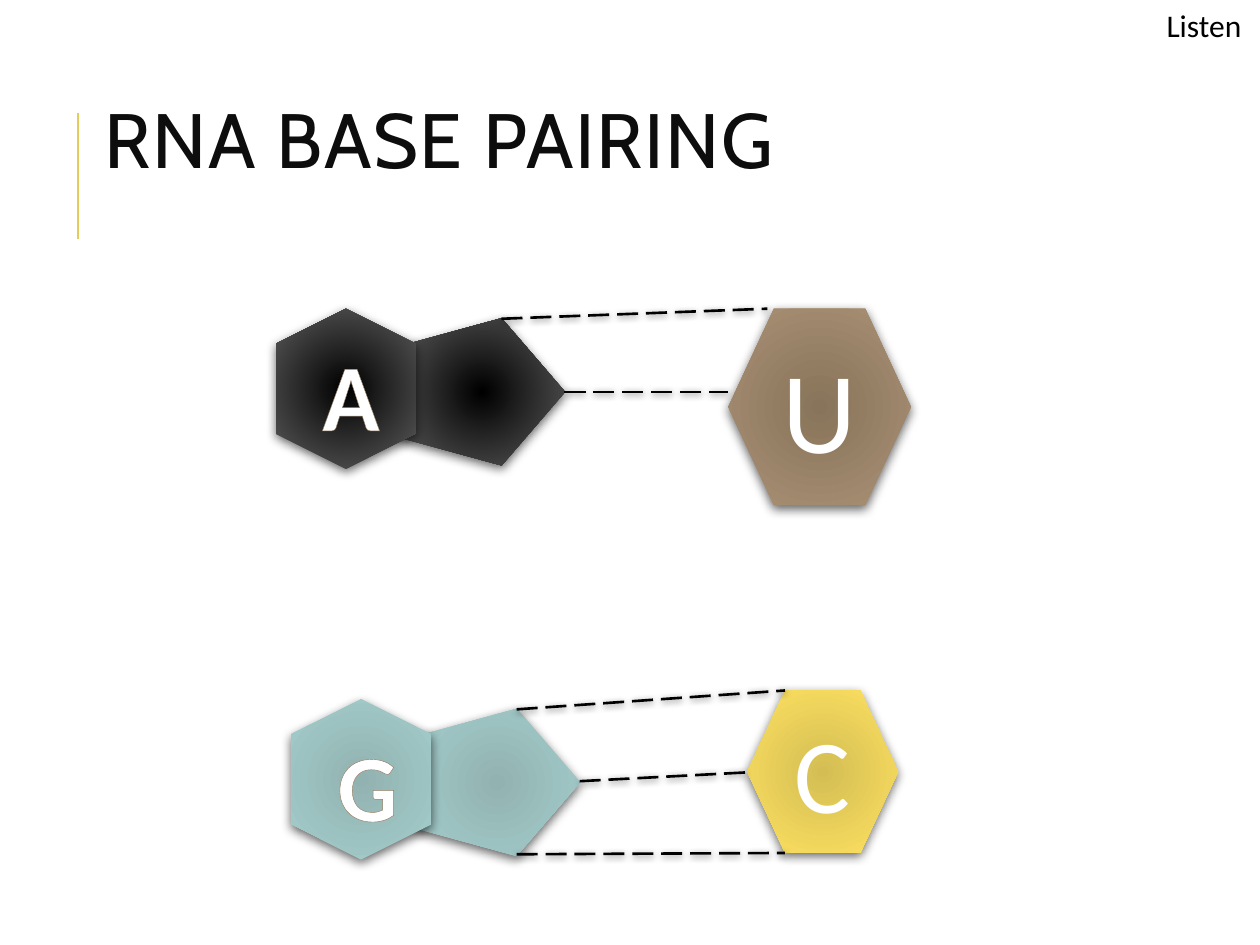
from lxml import etree
from pptx import Presentation
from pptx.dml.color import RGBColor
from pptx.enum.dml import MSO_LINE
from pptx.enum.shapes import MSO_CONNECTOR, MSO_SHAPE
from pptx.enum.text import MSO_ANCHOR, MSO_AUTO_SIZE, PP_ALIGN
from pptx.oxml import parse_xml
from pptx.oxml.ns import nsdecls
from pptx.util import Inches, Pt

HEXAGON, PENTAGON = MSO_SHAPE.HEXAGON, MSO_SHAPE.REGULAR_PENTAGON
STRAIGHT, LONG_DASH = MSO_CONNECTOR.STRAIGHT, MSO_LINE.LONG_DASH
LEFT, CENTER = PP_ALIGN.LEFT, PP_ALIGN.CENTER
TOP, MIDDLE = MSO_ANCHOR.TOP, MSO_ANCHOR.MIDDLE
FIT_SHAPE = MSO_AUTO_SIZE.SHAPE_TO_FIT_TEXT

WIDTH, HEIGHT = Inches(10), Inches(7.5)
COLUMN, ROW = WIDTH / 100, HEIGHT / 75

COLORS = {
    "title": "0D0D0D", "accent": "E3CC5A", "black": "000000",
    "white": "FFFFFF", "outline": "927C61",
}
GRADIENTS = {
    "A": ("000000", "5E5E5E"), "U": ("88745A", "AA9175"),
    "G": ("92B2B1", "A3CECC"), "C": ("D4BE54", "FFE261"),
}


def grid(*lengths):
    """Turn alternating columns and rows into slide lengths."""
    return [round(length * (ROW if index % 2 else COLUMN))
            for index, length in enumerate(lengths)]


def shadow_effect(opacity, blur, distance):
    """Return an effect list with a black shadow falling straight down."""
    return parse_xml(
        f'<a:effectLst {nsdecls("a")}><a:outerShdw blurRad="{Pt(blur)}" '
        f'dist="{Pt(distance)}" dir="5400000" rotWithShape="0">'
        f'<a:srgbClr val="{COLORS["black"]}"><a:alpha val="{opacity * 1000}"/>'
        '</a:srgbClr></a:outerShdw></a:effectLst>')


def radial_fill(inner, outer):
    """Return a circular gradient from the inner to the outer color."""
    return parse_xml(
        f'<a:gradFill {nsdecls("a")} rotWithShape="1"><a:gsLst>'
        f'<a:gs pos="0"><a:srgbClr val="{inner}"/></a:gs>'
        f'<a:gs pos="100000"><a:srgbClr val="{outer}"/></a:gs></a:gsLst>'
        '<a:path path="circle"><a:fillToRect l="100000" t="100000" '
        'r="100000" b="100000"/></a:path></a:gradFill>')


def outline_text(run):
    """Give the letters of a run a thin outline."""
    properties = run.font._element
    properties.insert(0, parse_xml(
        f'<a:ln {nsdecls("a")} w="{Pt(0.8)}"><a:solidFill>'
        f'<a:srgbClr val="{COLORS["outline"]}"/></a:solidFill></a:ln>'))


def write_text(shape, text, size, color, font="Calibri", align=CENTER, anchor=MIDDLE):
    """Write one run into a shape and return its paragraph and run."""
    shape.text_frame.vertical_anchor = anchor
    paragraph = shape.text_frame.paragraphs[0]
    paragraph.alignment = align
    run = paragraph.add_run()
    run.text = text
    run.font.size = Pt(size)
    run.font.name = font
    run.font.color.rgb = RGBColor.from_string(COLORS[color])
    return paragraph, run


def add_ring(shapes, kind, box, base, rotation=0):
    """Add a shaded ring of a base."""
    ring = shapes.add_shape(kind, *grid(*box))
    ring.rotation = rotation
    ring.line.fill.background()
    line = ring.line._ln
    line.addprevious(radial_fill(*GRADIENTS[base]))
    line.addnext(shadow_effect(60, 6, 2))
    return ring


def add_purine(slide, base, left, top):
    """Add a grouped double ring with its letter."""
    shapes = slide.shapes.add_group_shape().shapes
    add_ring(shapes, PENTAGON, (left + 11.3, top, 11.7, 13.2), base, 90)
    add_ring(shapes, HEXAGON, (left, top + 0.8, 12.7, 11.1), base, 90)
    box = shapes.add_textbox(*grid(left + 3.5, top + 1.7, 6, 8.4))
    box.text_frame.word_wrap = False
    box.text_frame.auto_size = FIT_SHAPE
    run = write_text(box, base, 54, "white", anchor=TOP)[1]
    run.font.bold = True
    outline_text(run)


def add_pyrimidine(slide, base, box, size):
    """Add a single ring with its letter."""
    write_text(add_ring(slide.shapes, HEXAGON, box, base), base, size, "white")


def add_line(slide, ends, color):
    """Add a plain line without a shadow."""
    line = slide.shapes.add_connector(STRAIGHT, *grid(*ends))
    line.line.color.rgb = RGBColor.from_string(COLORS[color])
    line.line.width = Pt(1.5)
    effects = etree.SubElement(line._element.spPr, shadow_effect(0, 0, 0).tag)
    return line, effects


def add_bond(slide, ends):
    """Add a dashed hydrogen bond with a soft shadow."""
    bond, effects = add_line(slide, ends, "black")
    bond.line.dash_style = LONG_DASH
    effects.getparent().replace(effects, shadow_effect(50, 4, 1))


def add_title(slide):
    """Add the slide title beside its accent line."""
    add_line(slide, (6.2, 19, 6.2, 9), "accent")
    box = slide.shapes.add_textbox(*grid(7.3, 3.4, 79.7, 16.4))
    box.text_frame.word_wrap = True
    paragraph, run = write_text(box, "RNA BASE PAIRING", 44, "title", "Cabin", LEFT)
    paragraph.line_spacing = 0.8
    run.font._element.set("spc", "100")


def add_corner_note(slide):
    """Add the note in the top right corner."""
    box = slide.shapes.add_textbox(*grid(91.6, 0, 9.5, 4))
    box.text_frame.word_wrap = True
    box.text_frame.auto_size = FIT_SHAPE
    write_text(box, "Listen", 18, "black", align=LEFT, anchor=TOP)


def main():
    """Build the slide and save it."""
    presentation = Presentation()
    presentation.slide_width, presentation.slide_height = WIDTH, HEIGHT
    slide = presentation.slides.add_slide(presentation.slide_layouts[6])

    add_title(slide)
    add_purine(slide, "A", 21.1, 24.5)
    for ends in ((39.8, 25.3, 60.9, 24.5), (44.8, 31.1, 57.8, 31.1)):
        add_bond(slide, ends)
    add_pyrimidine(slide, "C", (59.3, 54.8, 12, 12.9), 60)
    add_purine(slide, "G", 22.3, 55.5)
    for ends in ((41, 56.3, 62.3, 54.8), (46, 62, 59.3, 61.3), (41, 67.8, 62.3, 67.7)):
        add_bond(slide, ends)
    add_corner_note(slide)
    add_pyrimidine(slide, "U", (57.8, 24.5, 14.5, 15.6), 66)

    presentation.save("out.pptx")


if __name__ == "__main__":
    main()
